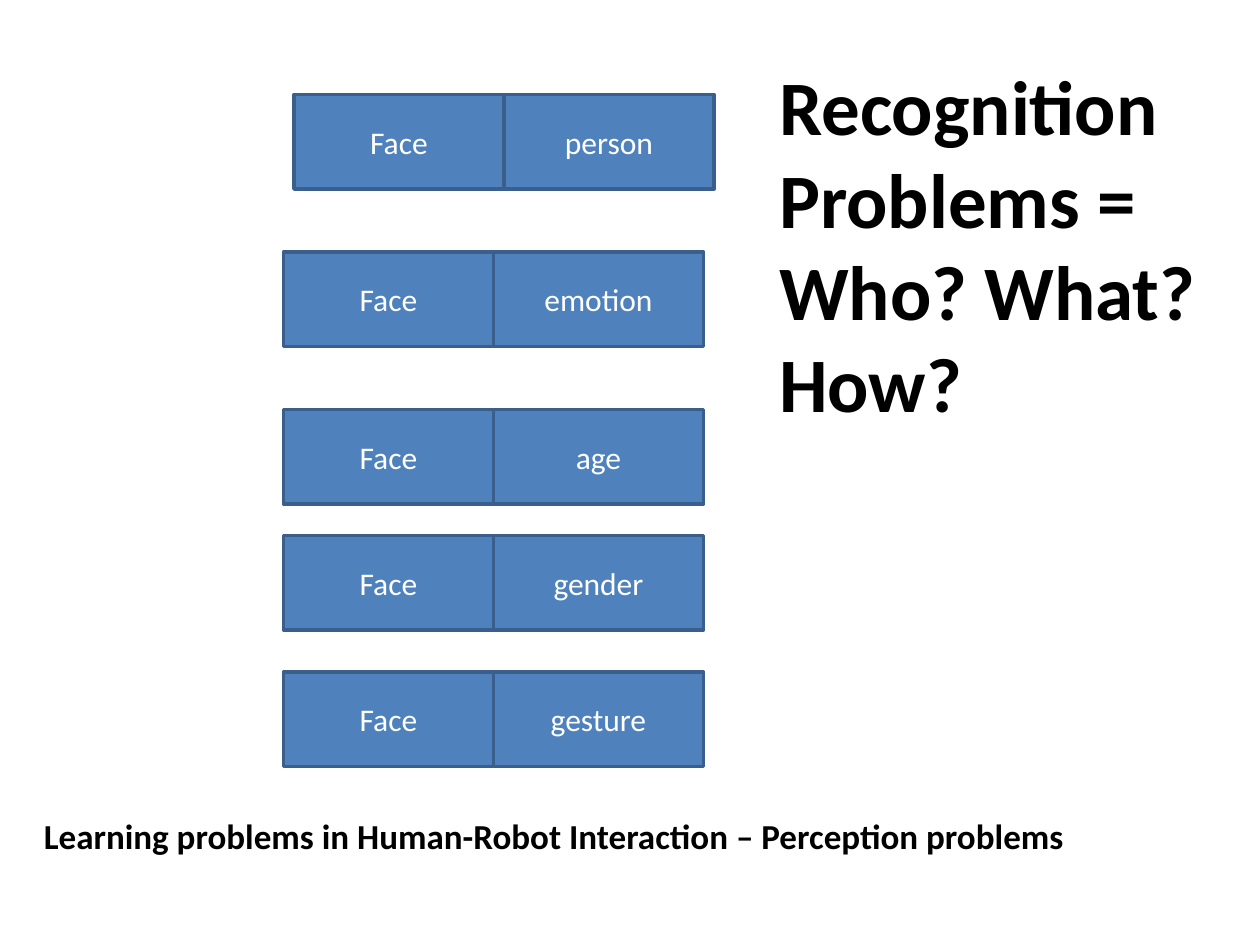
from pptx import Presentation
from pptx.dml.color import RGBColor
from pptx.enum.shapes import MSO_SHAPE
from pptx.enum.text import MSO_ANCHOR, MSO_AUTO_SIZE, PP_ALIGN
from pptx.util import Emu, Pt

EMU_PER_PX = 7620


def px(n):
    return Emu(n * EMU_PER_PX)


def color(code):
    return RGBColor.from_string(code)


def write(tf, text, size=18, font="Calibri", fill="000000", bold=False,
          align=PP_ALIGN.LEFT, anchor=MSO_ANCHOR.TOP, fit=MSO_AUTO_SIZE.NONE):
    tf.word_wrap = True
    tf.auto_size = fit
    tf.vertical_anchor = anchor
    p = tf.paragraphs[0]
    p.alignment = align
    r = p.add_run()
    r.text = text
    r.font.size = Pt(size)
    r.font.name = font
    r.font.bold = bold
    r.font.color.rgb = color(fill)


class Deck:
    box_fill = "4F81BD"
    box_line = "3A5F8C"
    box_text = "FFFFFF"

    def __init__(self, width, height):
        self.prs = Presentation()
        self.prs.slide_width = px(width)
        self.prs.slide_height = px(height)
        self.s = None

    def slide(self):
        self.s = self.prs.slides.add_slide(self.prs.slide_layouts[5])

    def title(self, text, x, y, w, h):
        sp = self.s.shapes.title
        sp.left, sp.top, sp.width, sp.height = map(px, (x, y, w, h))
        write(sp.text_frame, text, size=44, bold=True,
              fit=MSO_AUTO_SIZE.SHAPE_TO_FIT_TEXT)

    def text(self, text, x, y, w, h):
        sp = self.s.shapes.add_textbox(px(x), px(y), px(w), px(h))
        write(sp.text_frame, text, size=20, bold=True,
              fit=MSO_AUTO_SIZE.SHAPE_TO_FIT_TEXT)

    def box(self, text, x, y, w, h):
        sp = self.s.shapes.add_shape(MSO_SHAPE.RECTANGLE, px(x), px(y), px(w), px(h))
        sp.shadow.inherit = False
        sp.fill.solid()
        sp.fill.fore_color.rgb = color(self.box_fill)
        sp.line.color.rgb = color(self.box_line)
        sp.line.width = Pt(2)
        write(sp.text_frame, text, fill=self.box_text,
              align=PP_ALIGN.CENTER, anchor=MSO_ANCHOR.MIDDLE)

    def pair(self, source, target, x, y, w=200, h=90):
        for i, label in enumerate((source, target)):
            self.box(label, x + i * w, y, w, h)


def main():
    deck = Deck(1200, 900)
    deck.slide()
    problems = [
        ("person", 280, 90),
        ("emotion", 270, 240),
        ("age", 270, 390),
        ("gender", 270, 510),
        ("gesture", 270, 640),
    ]
    for target, x, y in problems:
        deck.pair("Face", target, x, y)
    deck.text("Learning problems in Human-Robot Interaction – Perception problems",
              30, 770, 1130, 53)
    deck.title("Recognition Problems = Who? What? How?", 730, 50, 470, 367)
    deck.prs.save("out.pptx")


if __name__ == "__main__":
    main()
